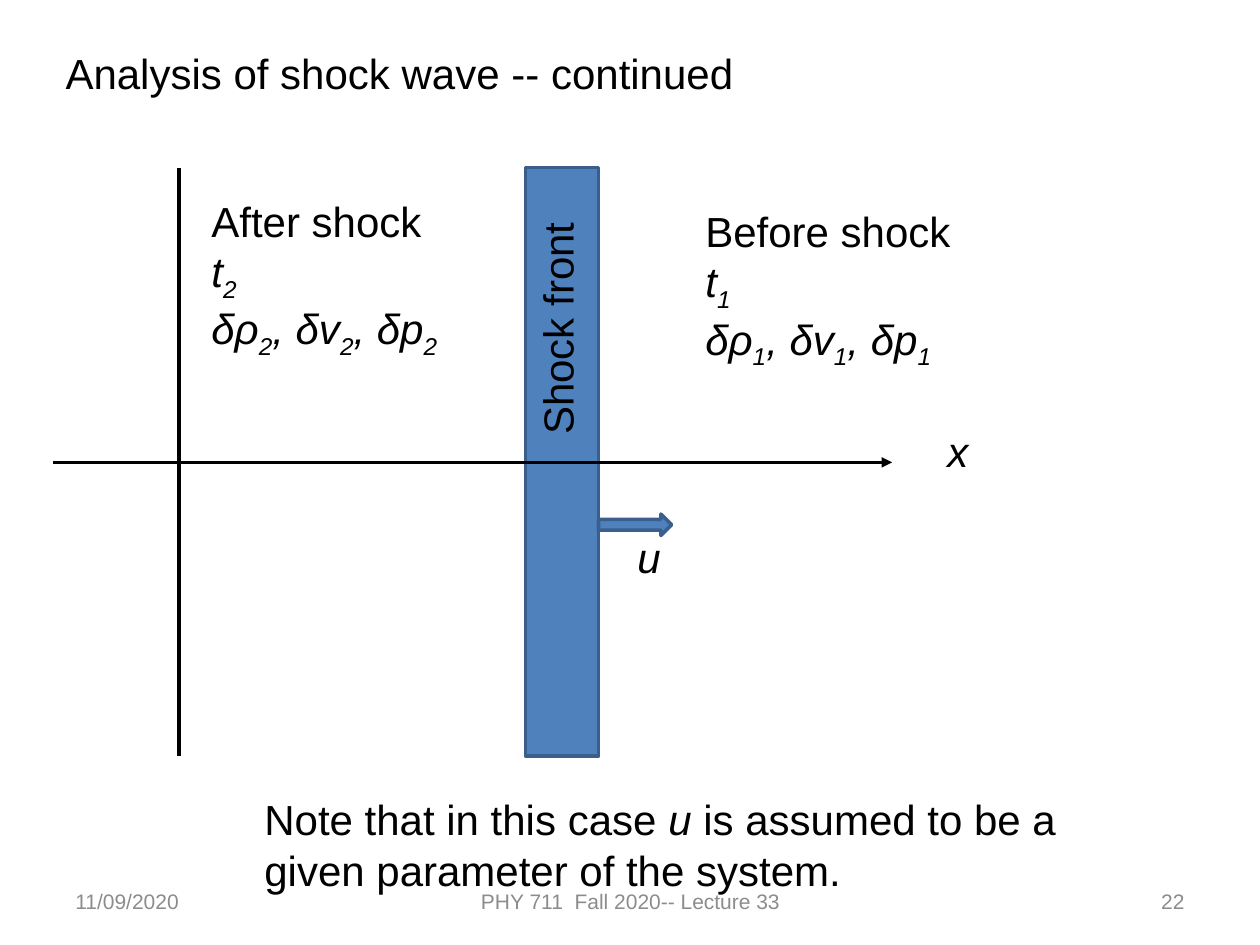
"""Build a slide showing a shock front moving along the x axis."""
from lxml import etree
from pptx import Presentation
from pptx import util as u
from pptx.dml.color import RGBColor
from pptx.enum import shapes, text
from pptx.oxml import ns

BLACK = RGBColor(0x00, 0x00, 0x00)
GREY = RGBColor(0x8C, 0x8C, 0x8C)
BLUE = RGBColor(0x4F, 0x81, 0xBD)
DARK_BLUE = RGBColor(0x3A, 0x5F, 0x8C)
LEFT, CENTER, RIGHT = text.PP_ALIGN.LEFT, text.PP_ALIGN.CENTER, text.PP_ALIGN.RIGHT
TOP, MIDDLE = text.MSO_ANCHOR.TOP, text.MSO_ANCHOR.MIDDLE


def write(box, paragraphs, size=24, color=BLACK, align=LEFT, anchor=TOP):
    frame = box.text_frame
    frame.word_wrap = True
    frame.auto_size = text.MSO_AUTO_SIZE.NONE
    frame.vertical_anchor = anchor
    for index, runs in enumerate(paragraphs):
        para = frame.paragraphs[0] if index == 0 else frame.add_paragraph()
        para.alignment = align
        for words, style in runs:
            span = para.add_run()
            span.text = words
            span.font.name = "Arial"
            span.font.size = u.Pt(size)
            span.font.color.rgb = color
            span.font.italic = style != "plain"
            if style == "sub":
                span.font._element.set("baseline", "-25000")


def add_text(page, place, paragraphs, **options):
    box = page.shapes.add_textbox(*map(u.Inches, place))
    write(box, paragraphs, **options)
    return box


deck = Presentation()
deck.slide_width, deck.slide_height = u.Inches(10), u.Inches(7.5)
page = deck.slides.add_slide(deck.slide_layouts[5])

title = page.shapes.title
title.left, title.top = u.Inches(0.42), u.Inches(0.33)
title.width, title.height = u.Inches(7.92), u.Inches(0.5)
write(title, [[("Analysis of shock wave -- continued", "plain")]])

for left, width, words, align in (
    (0.5, 2.33, "11/09/2020", LEFT),
    (3.42, 3.17, "PHY 711  Fall 2020-- Lecture 33", CENTER),
    (7.17, 2.33, "22", RIGHT),
):
    add_text(page, (left, 6.95, width, 0.4), [[(words, "plain")]],
             size=12, color=GREY, align=align, anchor=MIDDLE)

for kind, place in (
    (shapes.MSO_SHAPE.RECTANGLE, (4.17, 1.33, 0.58, 4.67)),
    (shapes.MSO_SHAPE.RIGHT_ARROW, (4.75, 4.08, 0.58, 0.17)),
):
    block = page.shapes.add_shape(kind, *map(u.Inches, place))
    block.shadow.inherit = False
    block.fill.solid()
    block.fill.fore_color.rgb = BLUE
    block.line.color.rgb = DARK_BLUE
    block.line.width = u.Pt(2)

for ends, arrow in (
    ((1.42, 1.33, 1.42, 6), False),
    ((0.42, 3.67, 7.08, 3.67), True),
):
    axis = page.shapes.add_connector(
        shapes.MSO_CONNECTOR.STRAIGHT, *map(u.Inches, ends))
    axis.line.color.rgb = BLACK
    axis.line.width = u.Pt(2)
    properties = axis._element.spPr
    if arrow:
        outline = properties.find(ns.qn("a:ln"))
        etree.SubElement(outline, ns.qn("a:tailEnd"), type="triangle")
    etree.SubElement(properties, ns.qn("a:effectLst"))

front = add_text(page, (4.17, 1.75, 0.61, 1.8), [[("Shock front", "plain")]])
front.text_frame.word_wrap = False
front.text_frame._txBody.bodyPr.set("vert", "vert270")

for place, heading, state in (
    ((1.58, 1.5, 2.17, 1.31), "After shock", "2"),
    ((5.5, 1.58, 2.17, 1.72), "Before shock", "1"),
):
    changes = []
    for symbol in ("δρ", ", δv", ", δp"):
        changes += [(symbol, "italic"), (state, "sub")]
    add_text(page, place, [
        [(heading, "plain")],
        [("t", "italic"), (state, "sub")],
        changes,
    ])

add_text(page, (7.42, 3.33, 0.92, 0.5), [[("x", "italic")]])
add_text(page, (4.96, 4.17, 0.75, 0.5), [[("u", "italic")]])
add_text(page, (2, 6.25, 7.08, 0.91), [[
    ("Note that in this case ", "plain"),
    ("u", "italic"),
    (" is assumed to be a given parameter of the system.", "plain"),
]])

deck.save("out.pptx")
